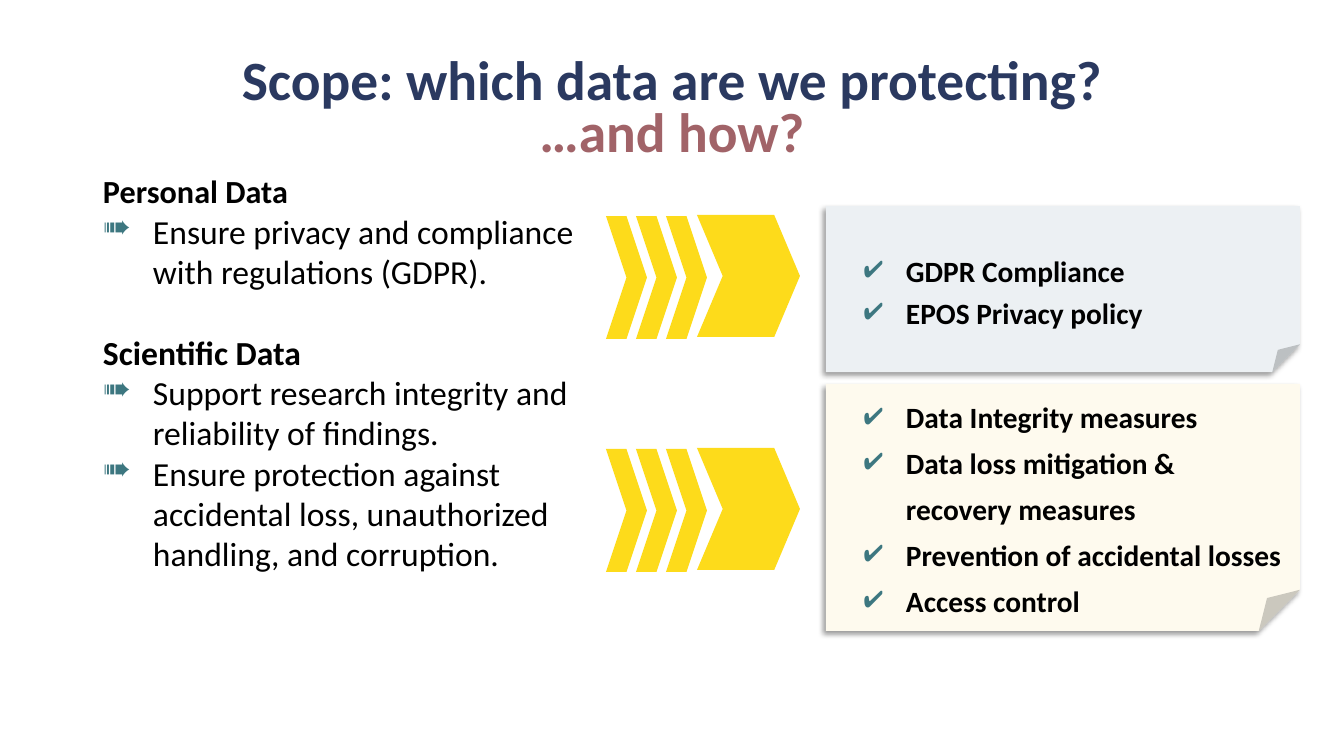
from dataclasses import dataclass

from lxml import etree
from pptx import Presentation
from pptx.dml.color import RGBColor
from pptx.enum.shapes import MSO_SHAPE
from pptx.enum.text import MSO_ANCHOR, PP_ALIGN
from pptx.oxml.ns import qn
from pptx.util import Emu, Pt

CHEVRON = MSO_SHAPE.CHEVRON
FOLDED_CORNER = MSO_SHAPE.FOLDED_CORNER
TOP, MIDDLE = MSO_ANCHOR.TOP, MSO_ANCHOR.MIDDLE
LEFT, CENTER = PP_ALIGN.LEFT, PP_ALIGN.CENTER
EMU_PER_PIXEL = 914400 / 100.8


@dataclass(frozen=True)
class Theme:
    font: str = "Calibri"
    ink: str = "000000"
    navy: str = "2A3960"
    rose: str = "A16368"
    teal: str = "3D7780"
    yellow: str = "FDDB1B"
    mist: str = "ECF0F3"
    cream: str = "FEFAEE"
    title_size: float = 39.6
    body_size: int = 24
    lead_size: int = 23
    card_size: int = 21


THEME = Theme()


def px(length):
    return Emu(round(length * EMU_PER_PIXEL))


def add_bullet(para, mark, indent, hanging):
    properties = para._p.get_or_add_pPr()
    properties.set("marL", str(px(indent)))
    properties.set("indent", str(-px(hanging)))
    color = etree.SubElement(properties, qn("a:buClr"))
    etree.SubElement(color, qn("a:srgbClr"), val=THEME.teal)
    etree.SubElement(properties, qn("a:buChar"), char=mark)


def write_text(frame, text, *, size, color=THEME.ink, bold=False, align=LEFT,
               spacing=1.0, before=0, mark=None, indent=0, hanging=0):
    para = frame.paragraphs[0]
    if para.runs:
        para = frame.add_paragraph()
    if mark:
        add_bullet(para, mark, indent, hanging)
    para.alignment = align
    para.line_spacing = spacing
    para.space_before = Pt(before)
    for number, line in enumerate(text.split("\n")):
        if number:
            para.add_line_break()
        span = para.add_run()
        span.text = line
        span.font.name = THEME.font
        span.font.size = Pt(size)
        span.font.bold = bold
        span.font.color.rgb = RGBColor.from_string(color)


def prepare_frame(shape, anchor=TOP, top_inset=5):
    frame = shape.text_frame
    frame.word_wrap = True
    frame.vertical_anchor = anchor
    frame.margin_left = frame.margin_right = px(10)
    frame.margin_top, frame.margin_bottom = px(top_inset), px(5)
    return frame


def add_box(page, left, top, width, height, anchor=TOP):
    box = page.shapes.add_textbox(px(left), px(top), px(width), px(height))
    return prepare_frame(box, anchor)


def add_filled_shape(page, kind, left, top, width, height, color):
    shape = page.shapes.add_shape(kind, px(left), px(top), px(width), px(height))
    shape.fill.solid()
    shape.fill.fore_color.rgb = RGBColor.from_string(color)
    shape.line.fill.background()
    shape.shadow.inherit = False
    return shape


def add_shadow(shape):
    effects = shape._element.spPr.find(qn("a:effectLst"))
    shadow = etree.SubElement(effects, qn("a:outerShdw"), blurRad=str(Pt(4)),
                              dist=str(Pt(3)), dir=str(135 * 60000),
                              algn="tr", rotWithShape="0")
    color = etree.SubElement(shadow, qn("a:srgbClr"), val="000000")
    etree.SubElement(color, qn("a:alpha"), val="40000")


def add_title(page, text, top, color):
    frame = add_box(page, 156, top, 1032, 56, MIDDLE)
    write_text(frame, text, size=THEME.title_size, color=color, bold=True,
               align=CENTER, spacing=0.9)


def add_arrow(page, top):
    for step in range(3):
        add_filled_shape(page, CHEVRON, 606 + 91 * step // 3, top, 41, 123,
                         THEME.yellow)
    head = add_filled_shape(page, CHEVRON, 697, top - 1, 103, 122, THEME.yellow)
    head.adjustments[0] = 0.25


def add_card(page, top, height, color, measures, spacing, top_inset):
    card = add_filled_shape(page, FOLDED_CORNER, 826, top, 474, height, color)
    add_shadow(card)
    frame = prepare_frame(card, top_inset=top_inset)
    for measure in measures:
        write_text(frame, measure, size=THEME.card_size, bold=True,
                   spacing=spacing, mark="✔", indent=70, hanging=42)


def add_goals(page):
    frame = add_box(page, 93, 163, 580, 467)
    goal = {"size": THEME.body_size, "mark": "➠", "indent": 50, "hanging": 50}
    write_text(frame, "Personal Data", size=THEME.lead_size, bold=True, spacing=1.1)
    write_text(frame, "Ensure privacy and compliance\nwith regulations (GDPR).", **goal)
    write_text(frame, "Scientific Data", size=THEME.body_size, bold=True, before=29)
    write_text(frame, "Support research integrity and reliability of findings.", **goal)
    write_text(frame, "Ensure protection against\n"
               "accidental loss, unauthorized handling, and corruption.", **goal)


def main():
    deck = Presentation()
    deck.slide_width, deck.slide_height = px(1344), px(756)
    page = deck.slides.add_slide(deck.slide_layouts[6])
    add_title(page, "Scope: which data are we protecting?", 54, THEME.navy)
    add_title(page, "…and how?", 107, THEME.rose)
    add_goals(page)
    for top in (216, 449):
        add_arrow(page, top)
    add_card(page, 206, 166, THEME.mist,
             ["GDPR Compliance", "EPOS Privacy policy"], 1.2, 40)
    add_card(page, 384, 247, THEME.cream,
             ["Data Integrity measures",
              "Data loss mitigation &\nrecovery measures",
              "Prevention of accidental losses",
              "Access control"], 1.3, 5)
    deck.save("out.pptx")


if __name__ == "__main__":
    main()
